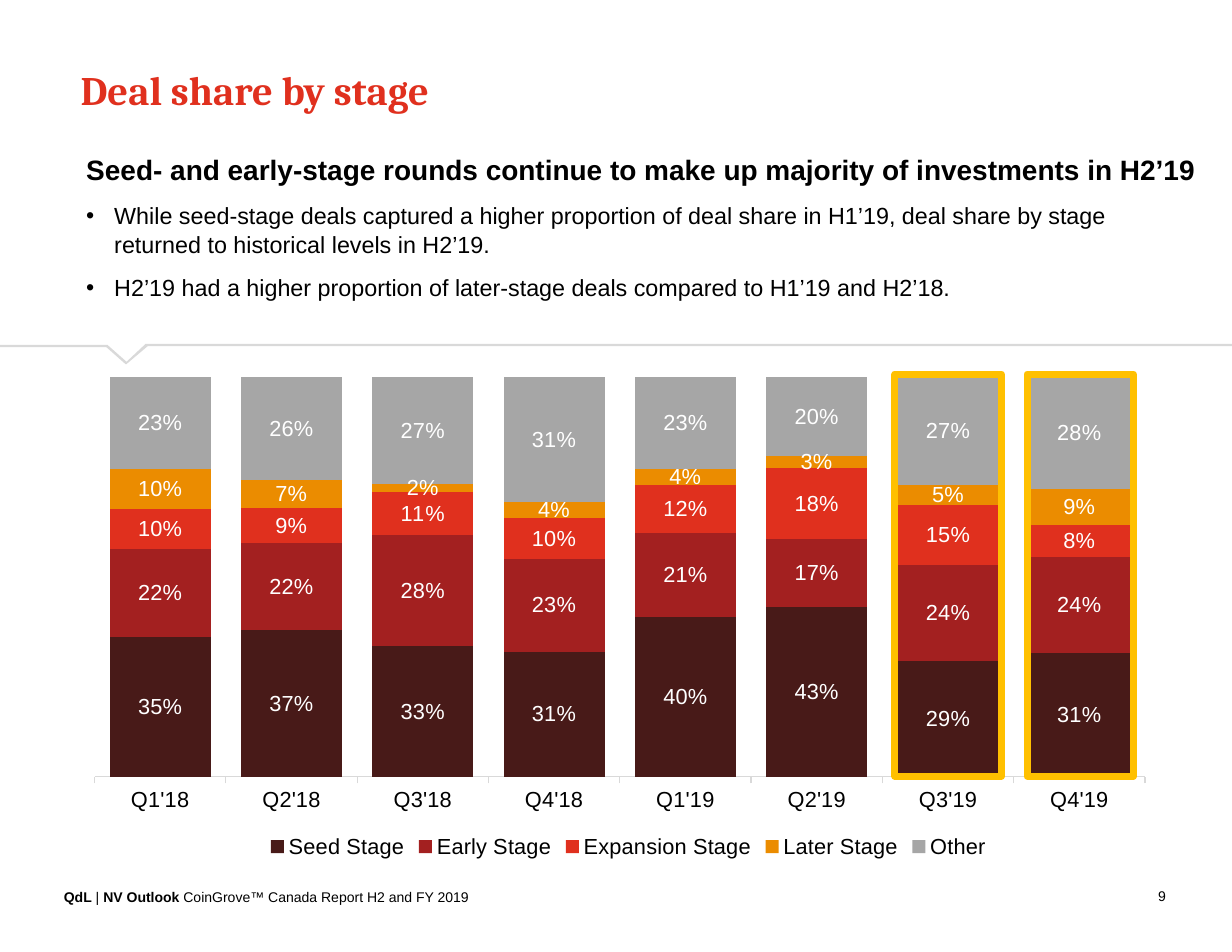
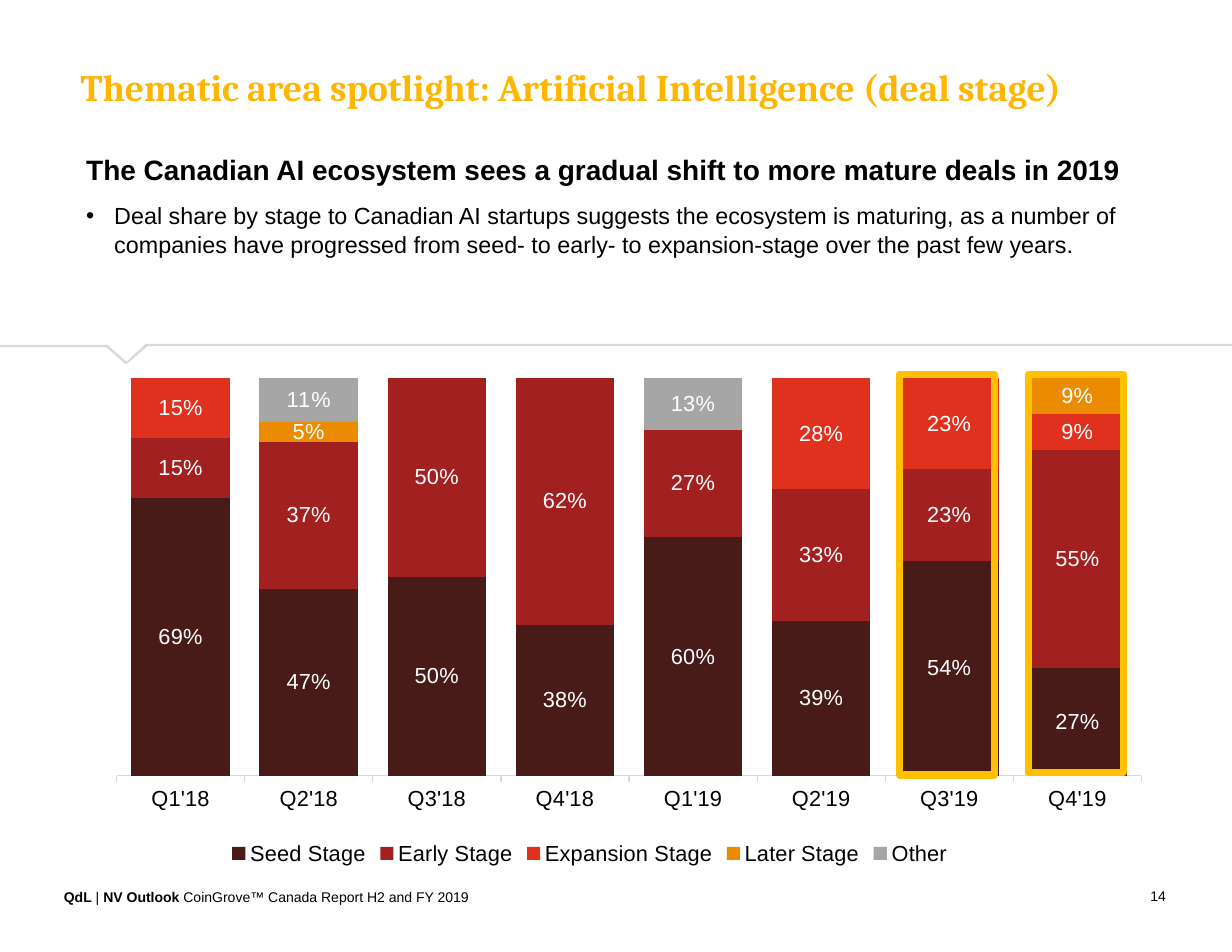
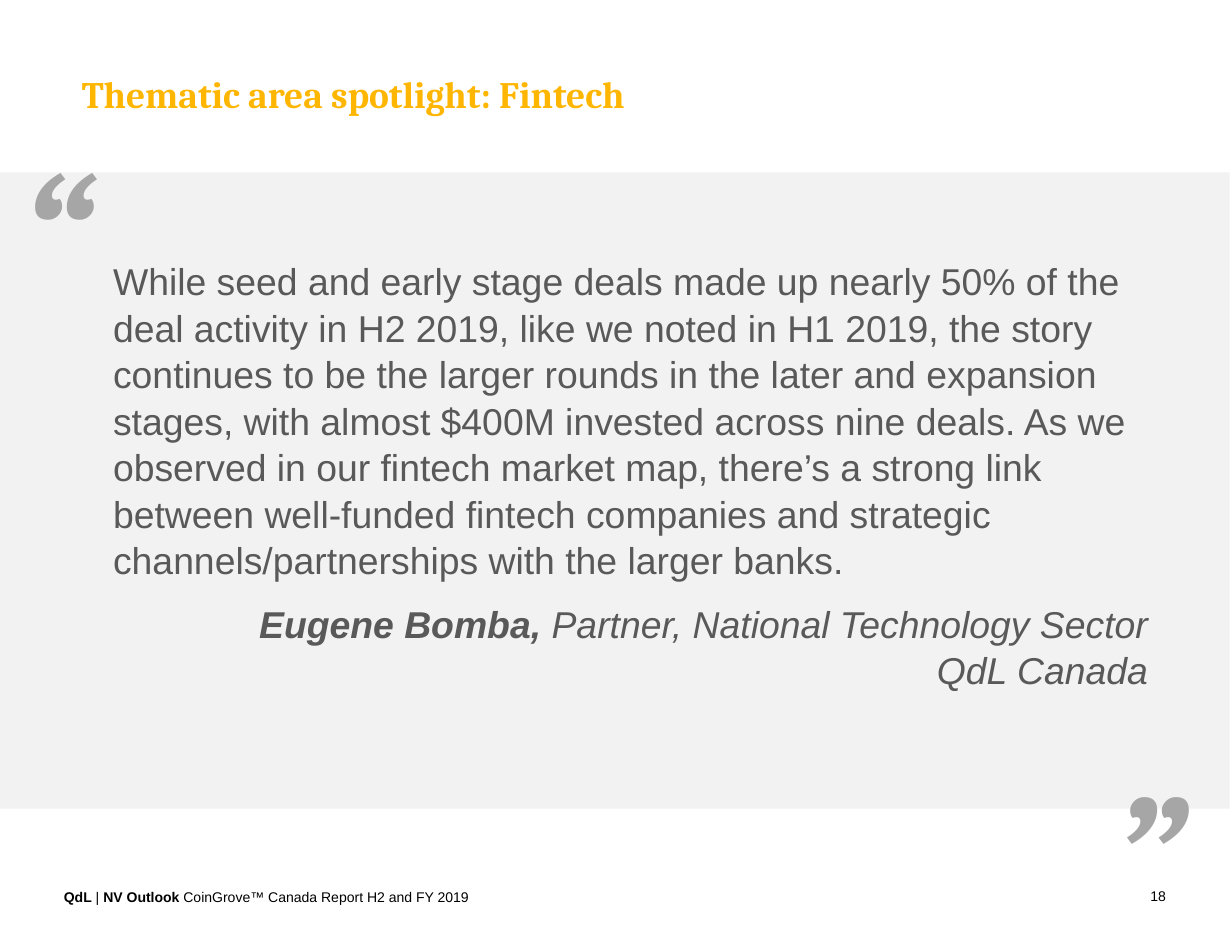
"""Build three report slides on deal stages and a fintech quote."""
from lxml import etree
from pptx import Presentation
from pptx.chart.data import CategoryChartData
from pptx.dml.color import RGBColor
from pptx.enum.chart import (XL_CHART_TYPE, XL_LABEL_POSITION,
                             XL_LEGEND_POSITION, XL_TICK_MARK)
from pptx.enum.shapes import MSO_SHAPE
from pptx.enum.text import MSO_ANCHOR, MSO_AUTO_SIZE, PP_ALIGN
from pptx.oxml.ns import qn
from pptx.util import Inches, Pt

STACKED = XL_CHART_TYPE.COLUMN_STACKED_100
CENTER_LABEL = XL_LABEL_POSITION.CENTER
BOTTOM = XL_LEGEND_POSITION.BOTTOM
TICK_OUT, TICK_NONE = XL_TICK_MARK.OUTSIDE, XL_TICK_MARK.NONE
RECTANGLE = MSO_SHAPE.RECTANGLE
TOP = MSO_ANCHOR.TOP
NO_FIT = MSO_AUTO_SIZE.NONE
LEFT, CENTER, RIGHT = PP_ALIGN.LEFT, PP_ALIGN.CENTER, PP_ALIGN.RIGHT

SANS, SERIF = "Arial", "Cambria"
BLACK, WHITE = "000000", "FFFFFF"
RED, YELLOW, HIGHLIGHT = "E0301E", "FFB600", "FFC000"
RULE_GRAY, BAND_GRAY, MARK_GRAY, QUOTE_GRAY = "D9D9D9", "F2F2F2", "A6A6A6", "595959"

QUARTERS = [f"Q{quarter}'{year}" for year in (18, 19) for quarter in (1, 2, 3, 4)]
STAGE_COLORS = {"Seed Stage": "481A18", "Early Stage": "A32020",
                "Expansion Stage": RED, "Later Stage": "EB8C00", "Other": MARK_GRAY}
ALL_SHARES = [
    [0.35, 0.37, 0.33, 0.31, 0.4, 0.43, 0.29, 0.31],
    [0.22, 0.22, 0.28, 0.23, 0.21, 0.17, 0.24, 0.24],
    [0.1, 0.09, 0.11, 0.1, 0.12, 0.18, 0.15, 0.08],
    [0.1, 0.07, 0.02, 0.04, 0.04, 0.03, 0.05, 0.09],
    [0.23, 0.26, 0.27, 0.31, 0.23, 0.2, 0.27, 0.28],
]
AI_SHARES = [
    [0.69, 0.47, 0.5, 0.38, 0.6, 0.39, 0.54, 0.27],
    [0.15, 0.37, 0.5, 0.62, 0.27, 0.33, 0.23, 0.55],
    [0.15, 0, 0, 0, 0, 0.28, 0.23, 0.09],
    [0, 0.05, 0, 0, 0, 0, 0, 0.09],
    [0, 0.11, 0, 0, 0.13, 0, 0, 0],
]
DIVIDER = [(1.31, 3.07), (11.15, 3.07), (11.15, 3.09), (1.32, 3.09), (1.13, 3.25),
           (1.12, 3.25), (0.95, 3.1), (-0.73, 3.1), (-0.73, 3.08), (0.96, 3.08),
           (1.13, 3.23), (1.3, 3.07)]


def color(value):
    """Turn a hex string into a colour."""
    return RGBColor.from_string(value)


def paint(fill, value):
    """Fill with one solid colour."""
    fill.solid()
    fill.fore_color.rgb = color(value)


def format_font(font, size, ink=BLACK, face=SANS, bold=False, italic=False):
    """Set every property of a font that the deck uses."""
    font.name, font.size, font.bold, font.italic = face, Pt(size), bold, italic
    font.color.rgb = color(ink)


def add_span(para, text, **style):
    """Add one formatted run, with line breaks kept."""
    for index, line in enumerate(text.split("\n")):
        if index:
            para.add_line_break()
        span = para.add_run()
        span.text = line
        format_font(span.font, **style)


def space_para(para, align=LEFT, after=0, line=1.04):
    """Set alignment and spacing of a paragraph."""
    para.alignment = align
    para.space_before, para.space_after = Pt(0), Pt(after)
    para.line_spacing = line


def place(shape, left, top, width, height):
    """Move and size a shape."""
    shape.left, shape.top = Inches(left), Inches(top)
    shape.width, shape.height = Inches(width), Inches(height)


def clear_margins(frame):
    """Make a frame wrap its text without insets."""
    frame.margin_left = frame.margin_right = frame.margin_top = frame.margin_bottom = 0
    frame.word_wrap, frame.auto_size, frame.vertical_anchor = True, NO_FIT, TOP


def add_text(page, bounds, spans, align=LEFT, line=1.04, **style):
    """Add a text box with one paragraph of (text, extra style) spans."""
    box = page.shapes.add_textbox(*map(Inches, bounds))
    clear_margins(box.text_frame)
    para = box.text_frame.paragraphs[0]
    space_para(para, align, line=line)
    for text, extra in spans:
        add_span(para, text, **{**style, **extra})


def add_page(deck, layout, number, title, bounds, size, ink):
    """Add a slide with its title, footer and number."""
    page = deck.slides.add_slide(deck.slide_layouts.get_by_name(layout))
    heading = page.shapes.title
    place(heading, *bounds)
    paint(heading.fill, WHITE)
    clear_margins(heading.text_frame)
    para = heading.text_frame.paragraphs[0]
    space_para(para)
    add_span(para, title, size=size, ink=ink, face=SERIF, bold=True)
    strong = {"bold": True}
    add_text(page, (0.57, 7.93, 4.81, 0.15),
             [("QdL", strong), (" | ", {}), ("NV Outlook ", strong),
              ("CoinGrove™ Canada Report H2 and FY 2019", {})], size=9)
    add_text(page, (8.58, 7.92, 1.83, 0.17), [(str(number), {})], align=RIGHT, size=9)
    return page


def set_bullet(para, char=None):
    """Give a paragraph a hanging bullet, or none."""
    props = para._p.get_or_add_pPr()
    indent = Inches(0.25) if char else 0
    props.set("marL", str(indent))
    props.set("indent", str(-indent))
    if char:
        holder = etree.SubElement(props, qn("a:buClr"))
        etree.SubElement(holder, qn("a:srgbClr"), val=BLACK)
        etree.SubElement(props, qn("a:buFont"), typeface=SANS)
        etree.SubElement(props, qn("a:buChar"), char=char)
    else:
        etree.SubElement(props, qn("a:buNone"))


def fill_body(page, width, headline, points):
    """Write a bold headline and bullet points into the body placeholder."""
    body = page.placeholders[1]
    place(body, 0.67, 1.3, width, 1.68)
    frame = body.text_frame
    frame.word_wrap, frame.auto_size, frame.vertical_anchor = True, NO_FIT, TOP
    for index, text in enumerate([headline] + points):
        para = frame.add_paragraph() if index else frame.paragraphs[0]
        set_bullet(para, "•" if index else None)
        space_para(para, after=9)
        add_span(para, text, size=15 if index else 18, bold=not index)


def set_plot_area(chart, bounds):
    """Fix the inner plot area as fractions of the chart."""
    area = chart.element.find(".//" + qn("c:plotArea"))
    for old in area.findall(qn("c:layout")):
        area.remove(old)
    layout = etree.Element(qn("c:layout"))
    area.insert(0, layout)
    manual = etree.SubElement(layout, qn("c:manualLayout"))
    settings = [("layoutTarget", "inner"), ("xMode", "edge"), ("yMode", "edge")]
    for tag, value in settings + list(zip("xywh", bounds)):
        etree.SubElement(manual, qn("c:" + tag), val=str(value))


def add_stage_chart(page, bounds, plot_area, shares):
    """Add the stacked column chart of deal share by stage."""
    data = CategoryChartData(number_format="0%")
    data.categories = QUARTERS
    for stage, values in zip(STAGE_COLORS, shares):
        data.add_series(stage, values)
    chart = page.shapes.add_chart(STACKED, *map(Inches, bounds), data).chart
    format_font(chart.font, 10, WHITE)
    chart.has_title = False
    chart.has_legend = True
    chart.legend.position, chart.legend.include_in_layout = BOTTOM, False
    format_font(chart.legend.font, 14)
    chart.value_axis.visible = False
    chart.value_axis.has_major_gridlines = False
    axis = chart.category_axis
    axis.major_tick_mark, axis.minor_tick_mark = TICK_OUT, TICK_NONE
    axis.format.line.color.rgb = color(RULE_GRAY)
    axis.format.line.width = Pt(0.75)
    format_font(axis.tick_labels.font, 14)
    plot = chart.plots[0]
    plot.gap_width, plot.overlap, plot.vary_by_categories = 30, 100, False
    for series, ink in zip(plot.series, STAGE_COLORS.values()):
        paint(series.format.fill, ink)
        labels = series.data_labels
        labels.show_value, labels.position = True, CENTER_LABEL
        labels.number_format, labels.number_format_is_linked = "0%;;", False
        format_font(labels.font, 14, WHITE)
    set_plot_area(chart, plot_area)


def add_divider(page):
    """Add the notched rule between text and chart."""
    points = [(Inches(x), Inches(y)) for x, y in DIVIDER]
    builder = page.shapes.build_freeform(*points[0])
    builder.add_line_segments(points[1:], close=True)
    rule = builder.convert_to_shape()
    rule.shadow.inherit = False
    paint(rule.fill, RULE_GRAY)
    rule.line.fill.background()


def add_highlight(page, bounds):
    """Add a yellow frame around one column."""
    frame = page.shapes.add_shape(RECTANGLE, *map(Inches, bounds))
    frame.shadow.inherit = False
    frame.fill.background()
    frame.line.color.rgb = color(HIGHLIGHT)
    frame.line.width = Pt(4.5)


def add_band(page, bounds):
    """Add the grey band behind the quote."""
    band = page.shapes.add_shape(RECTANGLE, *map(Inches, bounds))
    band.shadow.inherit = False
    paint(band.fill, BAND_GRAY)
    band.line.fill.background()


def add_chart_content(page, bounds, plot_area, shares, highlights):
    """Add chart, divider and column highlights."""
    add_stage_chart(page, bounds, plot_area, shares)
    add_divider(page)
    for highlight in highlights:
        add_highlight(page, highlight)


def build_deal_share(deck):
    """Build the slide on all deals."""
    page = add_page(deck, "Title and Content", 9, "Deal share by stage",
                    (0.72, 0.56, 3.59, 0.44), 26, RED)
    fill_body(page, 10.11,
              "Seed- and early-stage rounds continue to make up majority of investments in H2’19",
              ["While seed-stage deals captured a higher proportion of deal share in H1’19, "
               "deal share by stage returned to historical levels in H2’19.",
               "H2’19 had a higher proportion of later-stage deals compared to H1’19 and H2’18."])
    add_chart_content(page, (0.54, 3.21, 10.14, 4.5), (0.03, 0.035, 0.925, 0.793), ALL_SHARES,
                      [(left, 3.34, 0.95, 3.59) for left in (7.99, 9.17)])


def build_ai_stage(deck):
    """Build the slide on artificial intelligence deals."""
    page = add_page(deck, "Title and Content", 14,
                    "Thematic area spotlight: Artificial Intelligence (deal stage)",
                    (0.72, 0.56, 10.14, 0.4), 24, YELLOW)
    fill_body(page, 10,
              "The Canadian AI ecosystem sees a gradual shift to more mature deals in 2019",
              ["Deal share by stage to Canadian AI startups suggests the ecosystem is maturing, "
               "as a number of companies have progressed from seed- to early- to "
               "expansion-stage over the past few years."])
    add_chart_content(page, (-0.15, 2.87, 10.83, 4.9), (0.11, 0.103, 0.845, 0.725), AI_SHARES,
                      [(8.03, 3.34, 0.85, 3.58), (9.18, 3.34, 0.85, 3.56)])


def build_quote(deck):
    """Build the fintech quote slide."""
    page = add_page(deck, "Title Only", 18, "Thematic area spotlight: Fintech",
                    (0.73, 0.62, 9.69, 0.4), 24, YELLOW)
    add_band(page, (-0.02, 1.54, 11, 5.68))
    for mark, bounds in (("”", (9.67, 6.65, 1.16, 0.69)), ("“", (-0.61, 1.08, 2.21, 0.69))):
        add_text(page, bounds, [(mark, {})], align=CENTER, line=1.0, size=115,
                 ink=MARK_GRAY, face=SERIF, bold=True, italic=True)
    add_text(page, (1.01, 2.29, 9.46, 2.55),
             [("While seed and early stage deals made up nearly 50% of the deal activity in "
               "H2 2019, like we noted in H1 2019, the story continues to be the larger rounds "
               "in the later and expansion stages, with almost $400M invested across nine "
               "deals. As we observed in our fintech market map, there’s a strong link between "
               "well-funded fintech companies and strategic channels/partnerships with the "
               "larger banks.", {})], size=24, ink=QUOTE_GRAY)
    add_text(page, (0.98, 5.35, 9.27, 0.32),
             [("Eugene Bomba, ", {"bold": True}),
              ("Partner, National Technology Sector\nQdL Canada", {})],
             align=RIGHT, size=24, ink=QUOTE_GRAY, italic=True)


def main():
    """Build and save the deck."""
    deck = Presentation()
    deck.slide_width, deck.slide_height = Inches(11), Inches(8.5)
    build_deal_share(deck)
    build_ai_stage(deck)
    build_quote(deck)
    deck.save("out.pptx")


if __name__ == "__main__":
    main()
